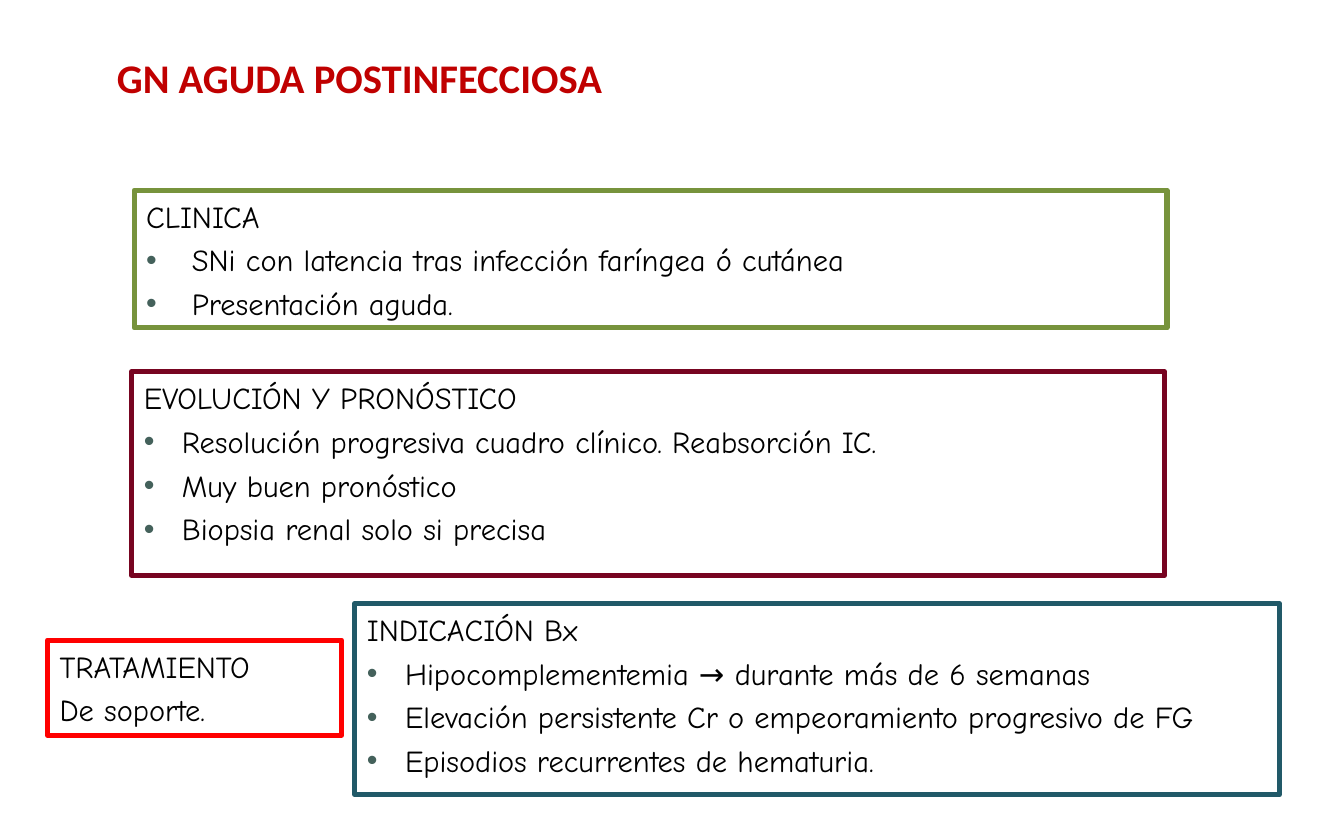
from pptx import Presentation
from pptx.dml.color import RGBColor
from pptx.enum.shapes import MSO_SHAPE
from pptx.enum.text import MSO_ANCHOR, PP_ALIGN
from pptx.oxml.ns import qn
from pptx.util import Pt
from lxml.etree import SubElement

# Content
TITLE = "GN AGUDA POSTINFECCIOSA"
# place (left, top, width, height), line, fill, indent, heading, plain lines, bullets
BOXES = [
    ((79.2, 112.3, 609.8, 81.4), "77933C", None, 27, "CLINICA", [],
     ["SNi con latencia tras infección faríngea ó cutánea",
      "Presentación aguda."]),
    ((77.8, 219.6, 609.8, 120.2), "770421", None, 22.5,
     "EVOLUCIÓN Y PRONÓSTICO", [],
     ["Resolución progresiva cuadro clínico. Reabsorción IC.",
      "Muy buen pronóstico",
      "Biopsia renal solo si precisa"]),
    ((28.1, 378, 173.5, 56.2), "FF0000", None, 0, "TRATAMIENTO",
     ["De soporte."], []),
    ((209.5, 356.4, 545.8, 113), "215968", "FFFFFF", 22.5, "INDICACIÓN Bx", [],
     ["Hipocomplementemia → durante más de 6 semanas",
      "Elevación persistente Cr o empeoramiento progresivo de FG",
      "Episodios recurrentes de hematuria."]),
]

# Formats
HEAD = {"name": "Calibri", "size": Pt(24), "bold": True}
BODY = {"name": "Comic Neue", "size": Pt(18)}
FRAME = {"word_wrap": True, "vertical_anchor": MSO_ANCHOR.TOP,
         "margin_left": Pt(7.2), "margin_right": Pt(7.2),
         "margin_top": Pt(4.5), "margin_bottom": Pt(3.6)}
GAP = 4.2
DOT = "44615B"


def color(code):
    return RGBColor.from_string(code)


def style(item, form):
    for key, value in form.items():
        setattr(item, key, value)


def bullet(para, indent):
    props = para._p.get_or_add_pPr()
    props.set("marL", str(Pt(indent)))
    props.set("indent", str(-Pt(indent)))
    tint = SubElement(props, qn("a:buClr"))
    SubElement(tint, qn("a:srgbClr"), val=DOT)
    SubElement(props, qn("a:buFont"), typeface="Arial")
    SubElement(props, qn("a:buChar"), char="•")


def write(frame, rows, form, ink):
    """Each row is a text and its bullet indent, 0 for none."""
    style(frame, FRAME)
    for i, (text, indent) in enumerate(rows):
        para = frame.add_paragraph() if i else frame.paragraphs[0]
        if i:
            para.space_before = Pt(GAP)
        para.alignment = PP_ALIGN.LEFT
        if indent:
            bullet(para, indent)
        run = para.add_run()
        run.text = text
        style(run.font, form)
        run.font.color.rgb = color(ink)


def main():
    deck = Presentation()
    deck.slide_width, deck.slide_height = Pt(793.44), Pt(496.08)
    shapes = deck.slides.add_slide(deck.slide_layouts[6]).shapes

    # Framed boxes
    for place, line, fill, indent, head, plain, points in BOXES:
        box = shapes.add_shape(MSO_SHAPE.RECTANGLE, *map(Pt, place))
        box.shadow.inherit = False
        box.line.color.rgb = color(line)
        box.line.width = Pt(3)
        if fill:
            box.fill.solid()
            box.fill.fore_color.rgb = color(fill)
        else:
            box.fill.background()
        rows = [(text, 0) for text in [head, *plain]]
        rows += [(text, indent) for text in points]
        write(box.text_frame, rows, BODY, "000000")

    # Title
    title = shapes.add_textbox(*map(Pt, (61.9, 26.6, 714.2, 82.8)))
    write(title.text_frame, [(TITLE, 0)], HEAD, "C00000")

    deck.save("out.pptx")


if __name__ == "__main__":
    main()
